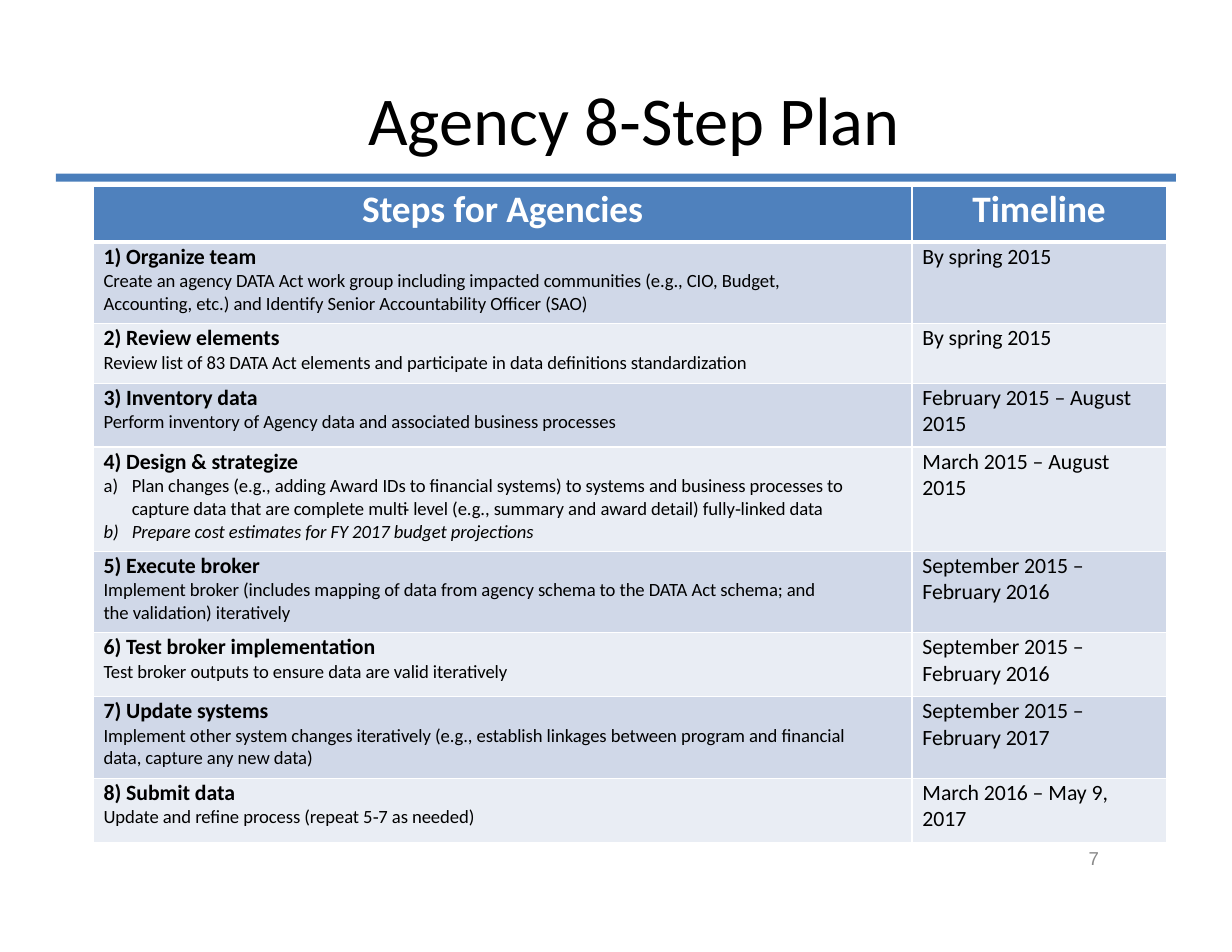
from dataclasses import dataclass

from lxml import etree
from pptx import Presentation
from pptx.dml.color import RGBColor
from pptx.enum.shapes import MSO_SHAPE
from pptx.enum.text import PP_ALIGN
from pptx.oxml.ns import qn
from pptx.util import Cm, Pt

RECT = MSO_SHAPE.RECTANGLE
LEFT, CENTER = PP_ALIGN.LEFT, PP_ALIGN.CENTER


@dataclass(frozen=True)
class Theme:
    font: str = "Calibri"
    number_font: str = "Arial"
    ink: str = "000000"
    white: str = "FFFFFF"
    bar: str = "4A7EBB"
    header: str = "4F81BD"
    bands: tuple = ("D0D8E8", "E9EDF4")
    muted: str = "898989"
    title: int = 44
    heading: int = 24
    step: int = 14
    detail: int = 12


HEADER = ("Steps for Agencies", "Timeline")
HEADER_HEIGHT = 1.27
COLUMNS = (18.57, 5.77)
TIMELINE_MARGIN = 0.45

# name, details, timeline, row height, right margin
STEPS = [
    ("Organize team",
     ["Create an agency DATA Act work group including impacted communities "
      "(e.g., CIO, Budget, Accounting, etc.) and Identify Senior "
      "Accountability Officer (SAO)"],
     "By spring 2015", 1.85, 1.65),
    ("Review elements",
     ["Review list of 83 DATA Act elements and participate in data "
      "definitions standardization"],
     "By spring 2015", 1.35, 0.8),
    ("Inventory data",
     ["Perform inventory of Agency data and associated business processes"],
     "February 2015 – August 2015", 1.45, 0.8),
    ("Design & strategize",
     ["Plan changes (e.g., adding Award IDs to financial systems) to systems "
      "and business processes to capture data that are complete multi‐level "
      "(e.g., summary and award detail) fully‐linked data",
      "Prepare cost estimates for FY 2017 budget projections"],
     "March 2015 – August 2015", 2.36, 0.8),
    ("Execute broker",
     ["Implement broker (includes mapping of data from agency schema to the "
      "DATA Act schema; and the validation) iteratively"],
     "September 2015 – February 2016", 1.85, 1.65),
    ("Test broker implementation",
     ["Test broker outputs to ensure data are valid iteratively"],
     "September 2015 – February 2016", 1.45, 0.8),
    ("Update systems",
     ["Implement other system changes iteratively (e.g., establish linkages "
      "between program and financial data, capture any new data)"],
     "September 2015 – February 2017", 1.85, 0.8),
    ("Submit data",
     ["Update and refine process (repeat 5‐7 as needed)"],
     "March 2016 – May 9, 2017", 1.45, 0.8),
]


class Deck:
    def __init__(self, theme):
        self.theme = theme
        self.prs = Presentation()
        self.prs.slide_width, self.prs.slide_height = Cm(27.94), Cm(21.59)
        self.s = self.prs.slides.add_slide(self.prs.slide_layouts[6])

    def paragraph(self, p, text, size, color, font=None, bold=False,
                  italic=False, align=LEFT):
        p.text = text
        p.alignment = align
        for r in p.runs:
            f = r.font
            f.name, f.size = font or self.theme.font, Pt(size)
            f.bold, f.italic = bold, italic
            f.color.rgb = RGBColor.from_string(color)
            r._r.get_or_add_rPr().set("spc", "-5")

    def text(self, x, y, w, h, text, size, color, **style):
        tf = self.s.shapes.add_textbox(Cm(x), Cm(y), Cm(w), Cm(h)).text_frame
        tf.word_wrap = True
        tf.margin_left = tf.margin_right = tf.margin_top = tf.margin_bottom = 0
        self.paragraph(tf.paragraphs[0], text, size, color, **style)

    def bar(self, x, y, w, h, color):
        sp = self.s.shapes.add_shape(RECT, Cm(x), Cm(y), Cm(w), Cm(h))
        sp.shadow.inherit = False
        sp.fill.solid()
        sp.fill.fore_color.rgb = RGBColor.from_string(color)
        sp.line.fill.background()

    def table(self, x, y, widths, heights):
        frame = self.s.shapes.add_table(len(heights), len(widths), Cm(x), Cm(y),
                                        Cm(sum(widths)), Cm(sum(heights)))
        for column, w in zip(frame.table.columns, widths):
            column.width = Cm(w)
        for row, h in zip(frame.table.rows, heights):
            row.height = Cm(h)
        return frame.table

    def cell(self, cell, fill, top=1, bottom=1, left_margin=0, right_margin=0):
        cell.margin_left, cell.margin_right = Cm(left_margin), Cm(right_margin)
        cell.margin_top, cell.margin_bottom = Cm(0.03), 0
        cell.fill.solid()
        cell.fill.fore_color.rgb = RGBColor.from_string(fill)
        tcPr = cell._tc.get_or_add_tcPr()
        edges = (("L", 1), ("R", 1), ("T", top), ("B", bottom))
        for i, (side, width) in enumerate(edges):
            ln = etree.Element(qn(f"a:ln{side}"), w=str(Pt(width)))
            solid = etree.SubElement(ln, qn("a:solidFill"))
            etree.SubElement(solid, qn("a:srgbClr"), val=self.theme.white)
            tcPr.insert(i, ln)
        return cell.text_frame

    def letter(self, p):
        pPr = p._p.get_or_add_pPr()
        pPr.set("marL", str(Cm(0.64)))
        pPr.set("indent", str(-Cm(0.64)))
        etree.SubElement(pPr, qn("a:buAutoNum"), type="alphaLcParenR")

    def step(self, tf, number, name, details):
        t = self.theme
        self.paragraph(tf.paragraphs[0], f"{number}) {name}", t.step, t.ink,
                       bold=True)
        for i, detail in enumerate(details):
            p = tf.add_paragraph()
            if len(details) > 1:
                self.letter(p)
            self.paragraph(p, detail, t.detail, t.ink, italic=i > 0)


def main():
    t = Theme()
    deck = Deck(t)
    deck.bar(1.27, 3.94, 25.4, 0.18, t.bar)
    deck.text(7.88, 1.75, 13, 2, "Agency 8‐Step Plan", t.title, t.ink, align=CENTER)
    deck.text(24.69, 19.2, 0.6, 0.53, "7", t.detail, t.muted, font=t.number_font)

    table = deck.table(2.11, 4.22, COLUMNS,
                       [HEADER_HEIGHT] + [step[3] for step in STEPS])
    for column, label in enumerate(HEADER):
        tf = deck.cell(table.cell(0, column), t.header, bottom=3)
        deck.paragraph(tf.paragraphs[0], label, t.heading, t.white,
                       bold=True, align=CENTER)
    for n, (name, details, timeline, _, margin) in enumerate(STEPS, 1):
        fill, top = t.bands[(n - 1) % 2], 3 if n == 1 else 1
        tf = deck.cell(table.cell(n, 0), fill, top, 1, 0.24, margin)
        deck.step(tf, n, name, details)
        tf = deck.cell(table.cell(n, 1), fill, top, 1, 0.24, TIMELINE_MARGIN)
        deck.paragraph(tf.paragraphs[0], timeline, t.step, t.ink)
    deck.prs.save("out.pptx")


if __name__ == "__main__":
    main()
